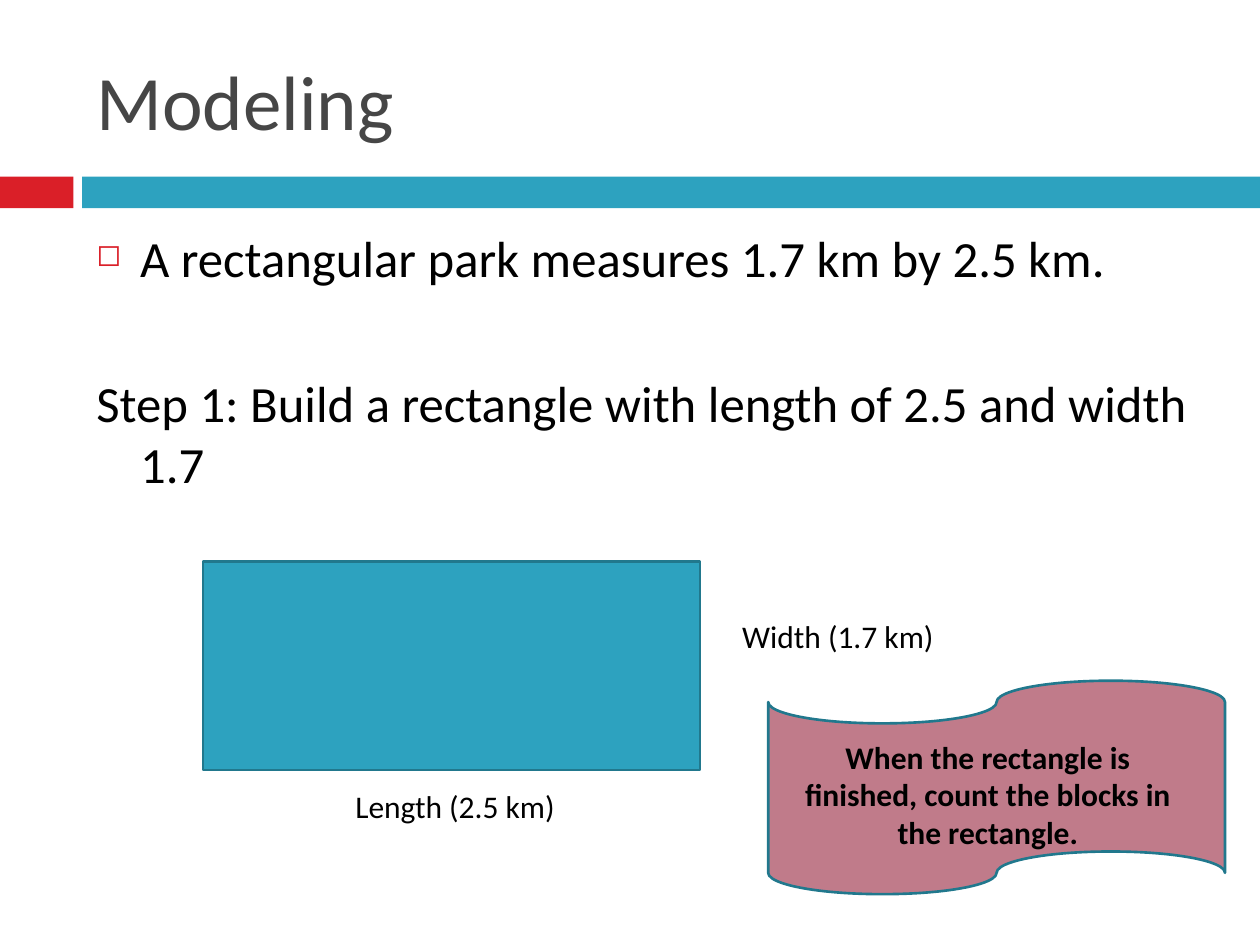
from pptx import Presentation, util as u
from pptx.dml.color import RGBColor
from pptx.enum import shapes, text
from pptx.oxml import parse_xml
from pptx.oxml.ns import nsdecls

Pt = u.Pt
RED, TEAL, EDGE, ROSE = "DA1F28", "2DA2BF", "21788D", "C07B8A"
GREY, BLACK = "464646", "000000"
KIND = shapes.MSO_SHAPE
ALIGN = text.PP_ALIGN


def color(code):
    return RGBColor.from_string(code)


def add_form(slide, kind, box, fill, edge=None):
    form = slide.shapes.add_shape(kind, *map(Pt, box))
    form.shadow.inherit = False
    form.fill.solid()
    form.fill.fore_color.rgb = color(fill)
    if edge:
        form.line.color.rgb = color(edge)
        form.line.width = Pt(1.5)
    else:
        form.line.fill.background()
    return form


def add_text(slide, box, lines, size, ink=BLACK, bold=False,
             align=ALIGN.LEFT, anchor=text.MSO_ANCHOR.TOP):
    frame = slide.shapes.add_textbox(*map(Pt, box)).text_frame
    frame.word_wrap = True
    frame.vertical_anchor = anchor
    frame.text = "\n".join(lines)
    for para in frame.paragraphs:
        para.alignment = align
        para.font.name = "Calibri"
        para.font.size = Pt(size)
        para.font.bold = bold
        para.font.color.rgb = color(ink)
    return frame


def add_bullet(para, mark, ink, scale):
    ns = nsdecls("a")
    props = para._p.get_or_add_pPr()
    parts = [
        f'<a:buClr {ns}><a:srgbClr val="{ink}"/></a:buClr>',
        f'<a:buSzPct {ns} val="{scale * 1000}"/>',
        f'<a:buChar {ns} char="{mark}"/>',
    ]
    # Bullet parts go ahead of the default run properties
    for spot, part in enumerate(parts):
        props.insert(spot + len(props.findall("{*}spcBef")), parse_xml(part))


def add_head(slide, box):
    x, y, w, h = box
    add_text(slide, (x, y, w, h), ["Modeling"], 44, GREY,
             anchor=text.MSO_ANCHOR.MIDDLE)
    # Two-colour band below the title, across the slide
    top, deep, split, gap = y + h + 5, 18, 42, 5
    add_form(slide, KIND.RECTANGLE, (0, top, split, deep), RED)
    left = split + gap
    add_form(slide, KIND.RECTANGLE, (left, top, 720 - left, deep), TEAL)


def add_body(slide, box):
    frame = add_text(slide, box, [
        "A rectangular park measures 1.7 km by 2.5 km.",
        "Step 1: Build a rectangle with length of 2.5 and width 1.7",
    ], 29)
    for para, gap in zip(frame.paragraphs, (2.5, 48)):
        para.space_before = Pt(gap)
        props = para._p.get_or_add_pPr()
        props.set("marL", str(Pt(25)))
        props.set("indent", str(-Pt(25)))
    add_bullet(frame.paragraphs[0], "◻", RED, 60)


def add_model(slide, box):
    x, y, w, h = box
    add_form(slide, KIND.RECTANGLE, box, TEAL, EDGE)
    # Side labels
    add_text(slide, (x + 80, y + h + 6, 227, 29), ["Length (2.5 km)"], 18)
    add_text(slide, (x + w + 17, y + 28, 136, 29), ["Width (1.7 km)"], 18)


def add_note(slide, box):
    x, y, w, h = box
    add_form(slide, KIND.FLOWCHART_PUNCHED_TAPE, box, ROSE, EDGE)
    add_text(slide, (x + 6, y + 29, w - 22, 73),
             ["When the rectangle is finished, count the blocks in "
              "the rectangle."], 18, bold=True, align=ALIGN.CENTER)


def main():
    deck = Presentation()
    deck.slide_width, deck.slide_height = Pt(720), Pt(540)
    slide = deck.slides.add_slide(deck.slide_layouts[6])
    add_head(slide, (48, 18, 642, 78))
    add_body(slide, (48, 126, 642, 354))
    add_model(slide, (116, 321, 284, 119))
    add_note(slide, (439, 389, 261, 122))
    deck.save("out.pptx")


if __name__ == "__main__":
    main()
